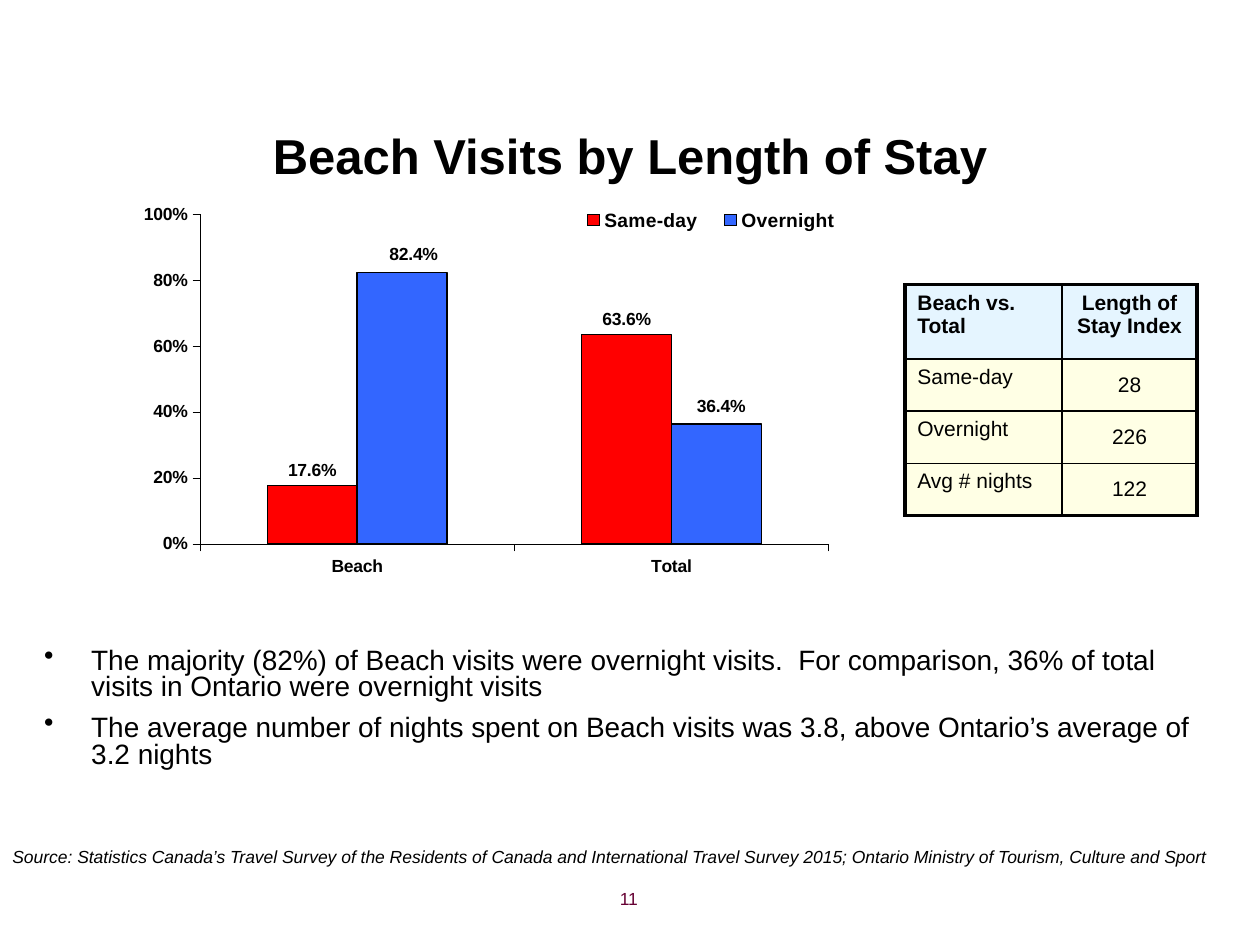
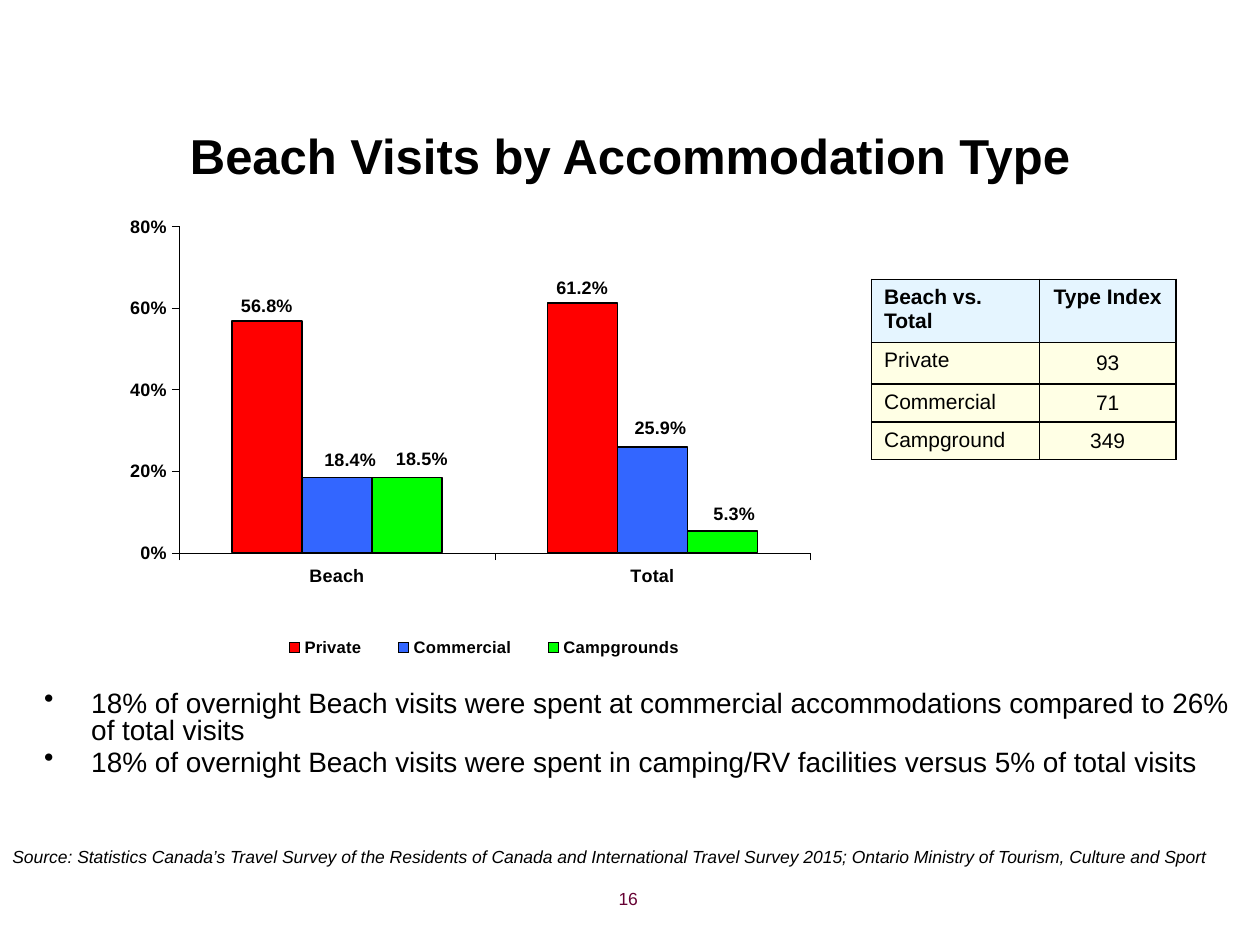
from dataclasses import dataclass

from pptx import Presentation
from pptx.chart.data import CategoryChartData
from pptx.dml.color import RGBColor
from pptx.enum.chart import XL_CHART_TYPE, XL_LABEL_POSITION, XL_LEGEND_POSITION, XL_TICK_MARK
from pptx.enum.text import MSO_ANCHOR, MSO_AUTO_SIZE, PP_ALIGN
from pptx.oxml import parse_xml
from pptx.oxml.ns import nsdecls, qn
from pptx.util import Cm, Pt

COLUMNS = XL_CHART_TYPE.COLUMN_CLUSTERED
ABOVE_BAR = XL_LABEL_POSITION.OUTSIDE_END
TOP_LEGEND, BOTTOM_LEGEND = XL_LEGEND_POSITION.TOP, XL_LEGEND_POSITION.BOTTOM
TICK_OUT, TICK_NONE = XL_TICK_MARK.OUTSIDE, XL_TICK_MARK.NONE
LEFT, CENTER, RIGHT = PP_ALIGN.LEFT, PP_ALIGN.CENTER, PP_ALIGN.RIGHT
TOP, MIDDLE = MSO_ANCHOR.TOP, MSO_ANCHOR.MIDDLE
NO_FIT = MSO_AUTO_SIZE.NONE

FONT = "Arial"
BLACK = RGBColor(0x00, 0x00, 0x00)
PLUM = RGBColor(0x66, 0x00, 0x33)
HEADER_BLUE = RGBColor(0xCC, 0xEC, 0xFF)
CREAM = RGBColor(0xFF, 0xFF, 0xCC)
SERIES_COLORS = (
    RGBColor(0xFF, 0x00, 0x00),
    RGBColor(0x33, 0x66, 0xFF),
    RGBColor(0x00, 0xFF, 0x00),
)

PLACES = ("Beach", "Total")
SOURCE = (
    "Source: Statistics Canada’s Travel Survey of the Residents of Canada and "
    "International Travel Survey 2015; Ontario Ministry of Tourism, Culture and Sport"
)


def set_font(font, size, bold=False, italic=False, color=BLACK):
    font.name = FONT
    font.size = Pt(size)
    font.bold = bold
    font.italic = italic
    font.color.rgb = color


def write(paragraph, text, size=12, align=LEFT, **look):
    paragraph.alignment = align
    run = paragraph.add_run()
    run.text = text
    set_font(run.font, size, **look)


def manual_layout(x, y, w=None, h=None, inner=False, edge=True):
    """Chart layout in fractions of the chart; without edge it is an offset."""
    parts = ['<c:layoutTarget val="inner"/>'] if inner else []
    if edge:
        parts += ['<c:xMode val="edge"/>', '<c:yMode val="edge"/>']
    sizes = {"x": x, "y": y, "w": w, "h": h}
    parts += [f'<c:{key} val="{val}"/>' for key, val in sizes.items() if val is not None]
    return parse_xml(
        f'<c:layout {nsdecls("c")}><c:manualLayout>{"".join(parts)}</c:manualLayout></c:layout>'
    )


@dataclass
class ChartStyle:
    text_size: float
    legend_size: float
    legend_at: object
    legend_box: tuple
    plot_box: tuple
    top_value: float


class Deck:
    def __init__(self):
        self.show = Presentation()
        self.show.slide_width = Cm(25.4)
        self.show.slide_height = Cm(19.05)
        self.slide = None

    def start(self, title, number):
        """Add a slide with its title, source line and page number."""
        self.slide = self.show.slides.add_slide(self.show.slide_layouts[5])
        heading = self.slide.shapes.title
        heading.left, heading.top = Cm(1.27), Cm(2.18)
        heading.width, heading.height = Cm(22.86), Cm(1.9)
        frame = heading.text_frame
        frame.auto_size = NO_FIT
        frame.vertical_anchor = MIDDLE
        write(frame.paragraphs[0], title, 28, CENTER, bold=True)

        source = self.text_frame(0, 16.94, 24.89, 0.69)
        write(source.paragraphs[0], SOURCE, 10, italic=True)
        page = self.text_frame(7.19, 17.78, 5.92, 0.89)
        write(page.paragraphs[0], str(number), 10, RIGHT, color=PLUM)

    def text_frame(self, left, top, width, height):
        box = self.slide.shapes.add_textbox(Cm(left), Cm(top), Cm(width), Cm(height))
        box.text_frame.word_wrap = True
        return box.text_frame

    def bullets(self, findings, left, top, width, height, gap):
        frame = self.text_frame(left, top, width, height)
        for index, finding in enumerate(findings):
            paragraph = frame.add_paragraph() if index else frame.paragraphs[0]
            props = paragraph._p.get_or_add_pPr()
            props.set("marL", str(Cm(0.95)))
            props.set("indent", str(-Cm(0.95)))
            props.append(parse_xml(f'<a:buChar {nsdecls("a")} char="•"/>'))
            paragraph.line_spacing = 0.8
            if index:
                paragraph.space_before = Pt(gap)
            write(paragraph, finding, 16)

    def index_table(self, rows, left, top, widths, heights, frame_width):
        shape = self.slide.shapes.add_table(
            len(rows), len(widths), Cm(left), Cm(top), Cm(sum(widths)), Cm(sum(heights))
        )
        table = shape.table
        table.horz_banding = False
        for column, width in zip(table.columns, widths):
            column.width = Cm(width)
        last_row, last_col = len(rows) - 1, len(widths) - 1
        for r, values in enumerate(rows):
            table.rows[r].height = Cm(heights[r])
            for c, value in enumerate(values):
                cell = table.cell(r, c)
                is_index = r > 0 and c > 0
                cell.vertical_anchor = MIDDLE if is_index else TOP
                if is_index:
                    cell.margin_left = cell.margin_right = 0
                    cell.margin_top = cell.margin_bottom = 0
                write(cell.text_frame.paragraphs[0], value, 12,
                      CENTER if c else LEFT, bold=r == 0)
                self.cell_fill(cell, CREAM if r else HEADER_BLUE)
                on_frame = {"L": c == 0, "R": c == last_col, "T": r == 0, "B": r == last_row}
                self.cell_borders(
                    cell, {side: frame_width if outer else 1 for side, outer in on_frame.items()}
                )

    @staticmethod
    def cell_fill(cell, color):
        cell.fill.solid()
        cell.fill.fore_color.rgb = color
        tint = cell._tc.tcPr.find(".//" + qn("a:srgbClr"))
        tint.append(parse_xml(f'<a:alpha {nsdecls("a")} val="50000"/>'))

    @staticmethod
    def cell_borders(cell, widths):
        for place, (side, width) in enumerate(widths.items()):
            cell._tc.tcPr.insert(place, parse_xml(
                f'<a:ln{side} {nsdecls("a")} w="{Pt(width)}"><a:solidFill>'
                f'<a:srgbClr val="{BLACK}"/></a:solidFill></a:ln{side}>'
            ))

    def column_chart(self, shares, left, top, width, height, style, nudges):
        data = CategoryChartData(number_format="0.0%")
        data.categories = PLACES
        for name, values in shares.items():
            data.add_series(name, values)
        chart = self.slide.shapes.add_chart(
            COLUMNS, Cm(left), Cm(top), Cm(width), Cm(height), data
        ).chart
        chart.has_title = False
        set_font(chart.font, style.text_size, bold=True)
        plot = chart.plots[0]
        plot.gap_width, plot.overlap = 150, 0
        plot.vary_by_categories = False
        self.axes(chart, style)
        self.legend(chart, style)

        plot_area = chart.element.find(".//" + qn("c:plotArea"))
        for old in plot_area.findall(qn("c:layout")):
            plot_area.remove(old)
        plot_area.insert(0, manual_layout(*style.plot_box, inner=True))

        for series, color in zip(plot.series, SERIES_COLORS):
            series.format.fill.solid()
            series.format.fill.fore_color.rgb = color
            series.format.line.color.rgb = BLACK
            series.format.line.width = Pt(0.75)
            series.invert_if_negative = False
            self.value_labels(series, style, nudges.get(series.name, ()))

    @staticmethod
    def axes(chart, style):
        for axis in (chart.category_axis, chart.value_axis):
            axis.has_major_gridlines = False
            axis.major_tick_mark, axis.minor_tick_mark = TICK_OUT, TICK_NONE
            axis.format.line.color.rgb = BLACK
            axis.format.line.width = Pt(0.19)
            set_font(axis.tick_labels.font, style.text_size, bold=True)
        scale = chart.value_axis
        scale.minimum_scale, scale.maximum_scale = 0, style.top_value
        scale.major_unit = 0.2
        scale.tick_labels.number_format = "0%"
        scale.tick_labels.number_format_is_linked = False

    @staticmethod
    def legend(chart, style):
        chart.has_legend = True
        legend = chart.legend
        legend.position = style.legend_at
        legend.include_in_layout = False
        set_font(legend.font, style.legend_size, bold=True)
        element = chart.element.find(".//" + qn("c:legend"))
        for old in element.findall(qn("c:layout")):
            element.remove(old)
        element.find(qn("c:legendPos")).addnext(manual_layout(*style.legend_box))

    @staticmethod
    def value_labels(series, style, nudges):
        labels = series.data_labels
        labels.show_value = True
        labels.number_format = "0.0%"
        labels.number_format_is_linked = False
        labels.position = ABOVE_BAR
        set_font(labels.font, style.text_size, bold=True)
        # Labels moved a little away from their bars
        for point, (x, y) in enumerate(nudges):
            label = series.points[point].data_label
            label.position = ABOVE_BAR
            set_font(label.font, style.text_size, bold=True)
            element = labels._element.findall(qn("c:dLbl"))[point]
            layout = manual_layout(x, y, edge=False)
            element.find(qn("c:idx")).addnext(layout)
            layout.addnext(parse_xml(
                f'<c:numFmt {nsdecls("c")} formatCode="0.0%" sourceLinked="0"/>'
            ))


def length_of_stay(deck):
    deck.start("Beach Visits by Length of Stay", 11)
    deck.column_chart(
        {"Same-day": (0.176, 0.636), "Overnight": (0.824, 0.364)},
        2.11, 3.81, 19.41, 9.58,
        ChartStyle(10, 11, TOP_LEGEND, (0.48, 0.03, 0.3, 0.07),
                   (0.099, 0.053, 0.653, 0.694), 1),
        {"Overnight": ((0.012, -0.006), (0.005, -0.006))},
    )
    deck.index_table(
        (("Beach vs. Total", "Length of Stay Index"), ("Same-day", "28"),
         ("Overnight", "226"), ("Avg # nights", "122")),
        18.24, 5.74, (3.17, 2.72), (1.5, 1.05, 1.05, 1.05), 2.25,
    )
    deck.bullets(
        ("The majority (82%) of Beach visits were overnight visits.  For comparison, "
         "36% of total visits in Ontario were overnight visits",
         "The average number of nights spent on Beach visits was 3.8, above Ontario’s "
         "average of 3.2 nights"),
        0.64, 12.95, 24.13, 4.24, gap=8,
    )


def accommodation_type(deck):
    deck.start("Beach Visits by Accommodation Type", 16)
    deck.column_chart(
        {"Private": (0.568, 0.612), "Commercial": (0.184, 0.259),
         "Campgrounds": (0.185, 0.053)},
        2.06, 4.04, 14.96, 9.55,
        ChartStyle(10.3, 9.5, BOTTOM_LEGEND, (0.21, 0.91, 0.61, 0.07),
                   (0.104, 0.055, 0.85, 0.689), 0.8),
        {"Commercial": ((0.018, -0.004), (0.011, -0.008)),
         "Campgrounds": ((0.02, -0.006), (0.016, -0.004))},
    )
    deck.index_table(
        (("Beach vs. Total", "Type Index"), ("Private", "93"),
         ("Commercial", "71"), ("Campground", "349")),
        17.57, 5.63, (3.38, 2.76), (1.27, 0.84, 0.76, 0.76), 1,
    )
    deck.bullets(
        ("18% of overnight Beach visits were spent at commercial accommodations "
         "compared to 26% of total visits",
         "18% of overnight Beach visits were spent in camping/RV facilities versus "
         "5% of total visits"),
        0.64, 13.82, 24.56, 3.86, gap=3.2,
    )


def main():
    deck = Deck()
    length_of_stay(deck)
    accommodation_type(deck)
    deck.show.save("out.pptx")


if __name__ == "__main__":
    main()
